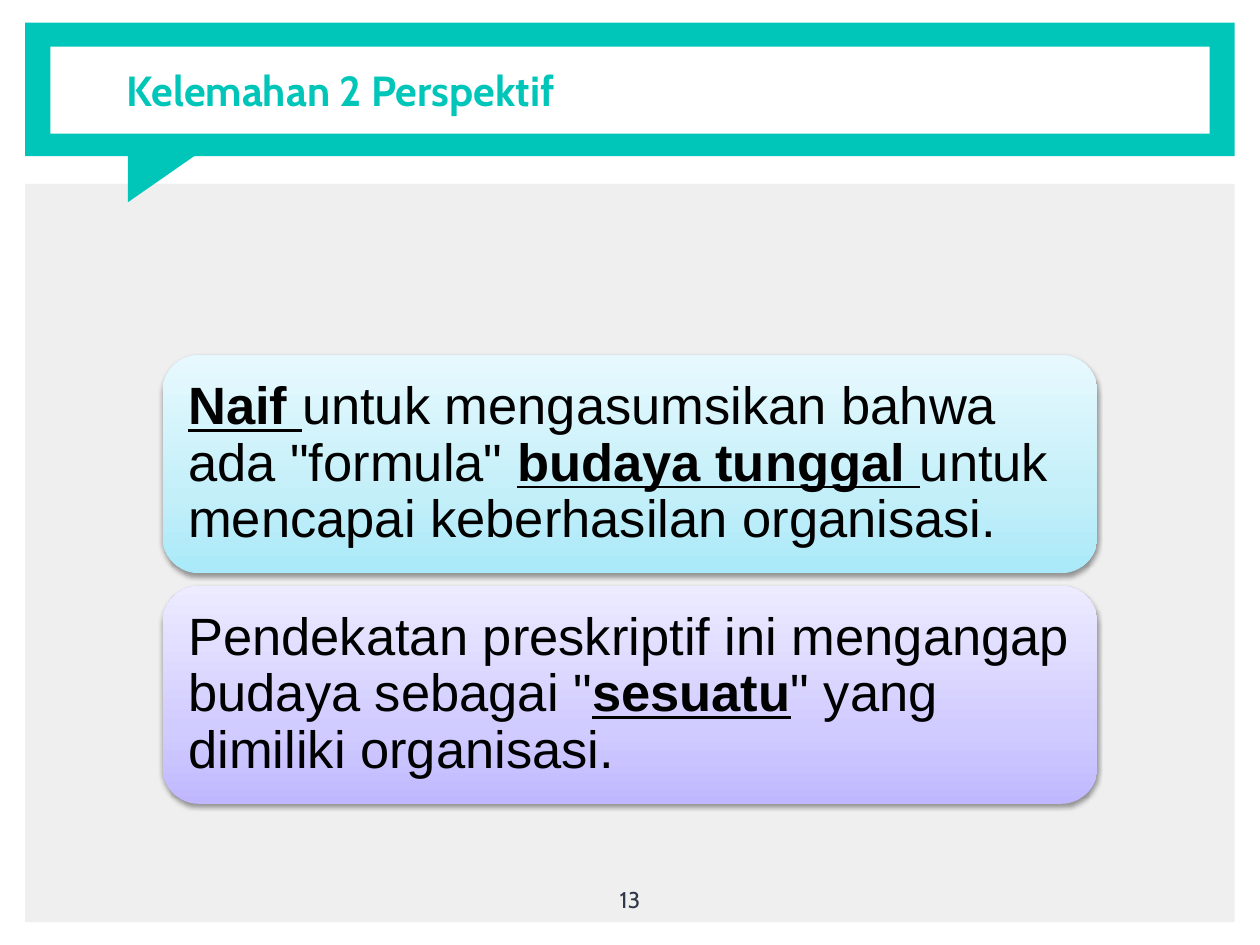
import dataclasses

import lxml.etree
import pptx
import pptx.dml.color
import pptx.enum.shapes
import pptx.enum.text
import pptx.oxml
import pptx.oxml.ns
import pptx.util

SHAPE = pptx.enum.shapes.MSO_SHAPE
ALIGN = pptx.enum.text.PP_ALIGN
ANCHOR = pptx.enum.text.MSO_ANCHOR
inches = pptx.util.Inches


@dataclasses.dataclass(frozen=True)
class Theme:
    teal: str = "00C5B9"
    panel: str = "EFEFEF"
    white: str = "FFFFFF"
    ink: str = "000000"
    page_ink: str = "2F3848"
    # Gradients run from the bottom edge of a card to its top edge
    aqua: tuple = ((0, "A9E9F9"), (35, "C3EFF9"), (100, "E7F9FE"))
    lilac: tuple = ((0, "BFB8FF"), (35, "D1CCFF"), (100, "EDEBFF"))
    heading_font: str = "Cabin"
    body_font: str = "Arial"
    title_size: int = 24
    body_size: int = 30
    page_size: int = 13


THEME = Theme()
WIDTH, HEIGHT = 10, 7.5
MARGIN = 0.2
BANNER_TOP, BANNER_HEIGHT = 0.18, 1.06
CARD_LEFT, CARD_TOP = 1.29, 2.82
CARD_HEIGHT, CARD_PITCH = 1.73, 1.83

# Each run is (text, emphasised)
CARDS = (
    (THEME.aqua, (
        ("Naif ", True),
        ('untuk mengasumsikan bahwa ada "formula" ', False),
        ("budaya tunggal ", True),
        ("untuk mencapai keberhasilan organisasi.", False),
    )),
    (THEME.lilac, (
        ('Pendekatan preskriptif ini mengangap budaya sebagai "', False),
        ("sesuatu", True),
        ('" yang dimiliki organisasi.', False),
    )),
)


def rgb(colour):
    return pptx.dml.color.RGBColor.from_string(colour)


def drawing_xml(markup):
    return pptx.oxml.parse_xml(markup.replace(">", f" {pptx.oxml.ns.nsdecls('a')}>", 1))


def add_block(slide, preset, left, top, width, height, colour):
    block = slide.shapes.add_shape(
        preset, inches(left), inches(top), inches(width), inches(height))
    block.shadow.inherit = False
    block.fill.solid()
    block.fill.fore_color.rgb = rgb(colour)
    block.line.fill.background()
    return block


def set_frame(frame, inset, anchor):
    frame.word_wrap = True
    frame.vertical_anchor = anchor
    frame.margin_left = frame.margin_right = inches(inset)
    frame.margin_top = frame.margin_bottom = inches(inset)


def add_run(paragraph, text, font, size, colour, bold=False, underline=False):
    run = paragraph.add_run()
    run.text = text
    run.font.name = font
    run.font.size = pptx.util.Pt(size)
    run.font.color.rgb = rgb(colour)
    run.font.bold = bold
    run.font.underline = underline


def add_label(slide, left, top, width, height, text, size, colour,
              bold=False, align=ALIGN.LEFT, anchor=ANCHOR.TOP):
    label = slide.shapes.add_textbox(
        inches(left), inches(top), inches(width), inches(height))
    set_frame(label.text_frame, 0.1, anchor)
    paragraph = label.text_frame.paragraphs[0]
    paragraph.alignment = align
    add_run(paragraph, text, THEME.heading_font, size, colour, bold)


def shade_card(card, stops):
    """Give a card its vertical gradient and soft drop shadow."""
    properties = card._element.spPr
    stop_list = "".join(
        f'<a:gs pos="{share * 1000}"><a:srgbClr val="{colour}"/></a:gs>'
        for share, colour in stops)
    gradient = drawing_xml(
        f'<a:gradFill rotWithShape="1"><a:gsLst>{stop_list}</a:gsLst>'
        '<a:lin ang="16200000" scaled="0"/></a:gradFill>')
    properties.replace(properties.find(pptx.oxml.ns.qn("a:solidFill")), gradient)

    blur, distance = pptx.util.Pt(3.1), pptx.util.Pt(1.6)
    shadow = drawing_xml(
        f'<a:outerShdw blurRad="{blur}" dist="{distance}" dir="5400000" rotWithShape="0">'
        f'<a:srgbClr val="{THEME.ink}"><a:alpha val="38000"/></a:srgbClr></a:outerShdw>')
    properties.find(pptx.oxml.ns.qn("a:effectLst")).append(shadow)


def add_card(slide, row, stops, runs):
    card = add_block(slide, SHAPE.ROUNDED_RECTANGLE, CARD_LEFT,
                     CARD_TOP + row * CARD_PITCH, WIDTH - 2 * CARD_LEFT,
                     CARD_HEIGHT, stops[0][1])
    shade_card(card, stops)
    set_frame(card.text_frame, 0.12, ANCHOR.MIDDLE)
    paragraph = card.text_frame.paragraphs[0]
    paragraph.alignment = ALIGN.LEFT
    paragraph.line_spacing = 0.9
    for text, emphasised in runs:
        add_run(paragraph, text, THEME.body_font, THEME.body_size, THEME.ink,
                bold=emphasised, underline=emphasised)


def add_banner(slide):
    full_width = WIDTH - 2 * MARGIN
    add_block(slide, SHAPE.RECTANGLE, MARGIN, BANNER_TOP,
              full_width, BANNER_HEIGHT, THEME.teal)
    tail = add_block(slide, SHAPE.RIGHT_TRIANGLE, 1.12, 1.02, 0.48, 0.69, THEME.teal)
    tail.rotation = 90
    add_block(slide, SHAPE.RECTANGLE, 2 * MARGIN, 0.37,
              WIDTH - 4 * MARGIN, 0.69, THEME.white)
    add_label(slide, 0.91, BANNER_TOP, 8.7, BANNER_HEIGHT, "Kelemahan 2 Perspektif",
              THEME.title_size, THEME.teal, bold=True, anchor=ANCHOR.MIDDLE)


def main():
    deck = pptx.Presentation()
    deck.slide_width, deck.slide_height = inches(WIDTH), inches(HEIGHT)
    slide = deck.slides.add_slide(deck.slide_layouts[6])

    # Grey content panel, then the speech-bubble banner over its top edge
    add_block(slide, SHAPE.RECTANGLE, MARGIN, 1.46, WIDTH - 2 * MARGIN, 5.86, THEME.panel)
    add_banner(slide)

    # Stacked statement cards
    for row, (stops, runs) in enumerate(CARDS):
        add_card(slide, row, stops, runs)

    # Page number
    add_label(slide, WIDTH / 2 - 0.3, 6.93, 0.6, 0.57, "13",
              THEME.page_size, THEME.page_ink, align=ALIGN.CENTER)

    deck.save("out.pptx")


if __name__ == "__main__":
    main()
